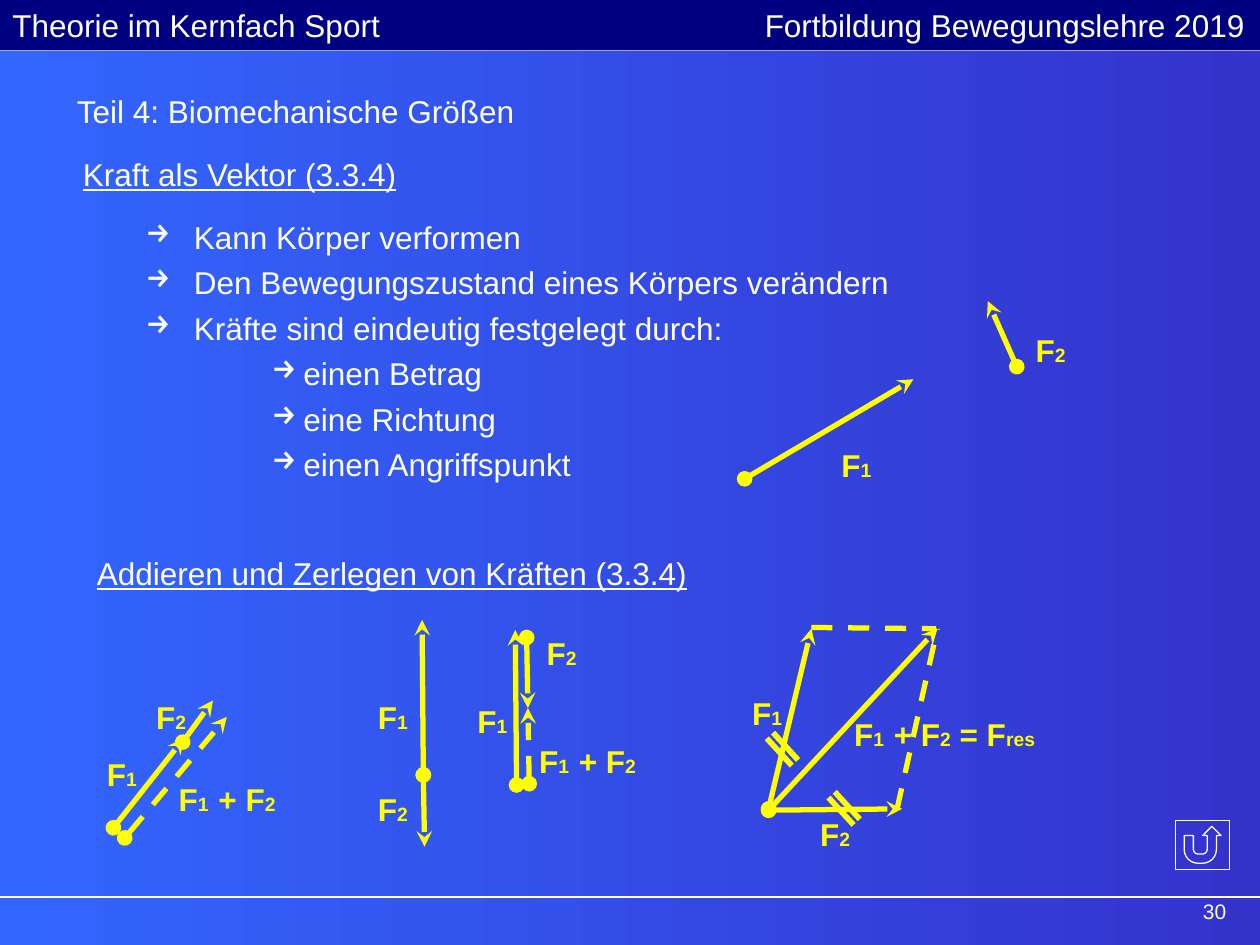
from lxml import etree
from pptx import Presentation, util as u
from pptx.dml.color import RGBColor
from pptx.enum import dml, shapes, text
from pptx.oxml import ns

COLORS = {
    "white": "FFFFFF",
    "yellow": "FFFF00",
    "header": "000080",
    "left": "3366FF",
    "right": "3333CC",
}
FONT = "Arial"

F1 = [("F", 18), ("1", 11)]
F2 = [("F", 18), ("2", 11)]
SUM = F1 + [(" ", 20), ("+ F", 18), ("2", 11)]
RESULTANT = SUM + [(" = F", 18), ("res", 11)]

LABELS = [
    (6.58, 3.49, 0.71, F1), (8.12, 2.58, 0.71, F2),
    (0.75, 5.94, 0.71, F1), (1.14, 5.49, 0.71, F2), (1.32, 6.11, 1.19, SUM),
    (2.9, 5.49, 0.71, F1), (2.9, 6.22, 0.71, F2),
    (3.69, 5.52, 0.71, F1), (4.24, 4.98, 0.71, F2), (4.18, 5.81, 1.19, SUM),
    (5.87, 5.46, 0.71, F1), (6.41, 6.42, 0.71, F2), (6.68, 5.6, 2.76, RESULTANT),
]
FORCES = [
    (5.91, 3.8, 7.25, 3.01), (8.07, 2.91, 7.84, 2.39),
    (1.45, 5.89, 1.69, 5.56), (0.9, 6.57, 1.46, 5.86),
    (3.36, 6.15, 3.35, 4.92), (3.36, 6.15, 3.37, 6.72),
    (4.18, 5.06, 4.19, 5.62), (4.1, 6.23, 4.09, 5),
    (6.1, 6.43, 7.16, 6.42), (6.1, 6.42, 6.44, 4.99), (6.1, 6.43, 7.44, 4.99),
]
DASHED_SUMS = [(0.99, 6.65, 1.8, 5.69), (4.2, 6.22, 4.19, 5.62)]
PARALLELS = [(7.12, 6.42, 7.44, 4.99), (6.44, 4.98, 7.43, 4.99)]
BULLETS = [
    ("Kann Körper verformen", 0),
    ("Den Bewegungszustand eines Körpers verändern", 0),
    ("Kräfte sind eindeutig festgelegt durch:", 0),
    ("einen Betrag", 2),
    ("eine Richtung", 2),
    ("einen Angriffspunkt", 2),
]
INDENTS = {0: (0.38, -0.38), 2: (1.25, -0.25)}


def rgb(name):
    return RGBColor.from_string(COLORS[name])


def add_run(paragraph, words, size=18, color="white", bold=False, underline=False):
    run = paragraph.add_run()
    run.text = words
    font = run.font
    font.name, font.size = FONT, u.Pt(size)
    font.bold, font.underline = bold, underline
    font.color.rgb = rgb(color)


def add_box(slide, left, top, width, height=0.4):
    box = slide.shapes.add_textbox(*map(u.Inches, (left, top, width, height)))
    box.text_frame.word_wrap = True
    return box.text_frame


def add_label(slide, left, top, width, runs):
    height = 0.44 if len(runs) > 2 else 0.4
    paragraph = add_box(slide, left, top, width, height).paragraphs[0]
    for words, size in runs:
        add_run(paragraph, words, size, "yellow", bold=True)


def add_line(slide, ends, color="yellow", width=3, dashed=False, arrow=False):
    line = slide.shapes.add_connector(
        shapes.MSO_CONNECTOR.STRAIGHT, *map(u.Inches, ends))
    line.line.color.rgb = rgb(color)
    line.line.width = u.Pt(width)
    if dashed:
        line.line.dash_style = dml.MSO_LINE.DASH
    if arrow:
        outline = line.line._get_or_add_ln()
        for tag, kind in (("a:headEnd", "oval"), ("a:tailEnd", "stealth")):
            etree.SubElement(outline, ns.qn(tag)).set("type", kind)
    etree.SubElement(line._element.spPr, ns.qn("a:effectLst"))


def add_preset(slide, kind, left, top, width, height, fill=None):
    shape = slide.shapes.add_shape(
        kind, *map(u.Inches, (left, top, width, height)))
    shape.shadow.inherit = False
    if fill:
        shape.fill.solid()
        shape.fill.fore_color.rgb = rgb(fill)
        shape.line.fill.background()
    else:
        shape.fill.background()
        shape.line.color.rgb = rgb("white")
        shape.line.width = u.Pt(0.75)
    return shape


def add_background(slide):
    fill = slide.background.fill
    fill.gradient()
    fill.gradient_angle = 0
    for stop, name in zip(fill.gradient_stops, ("left", "right")):
        stop.color.rgb = rgb(name)


def add_frame(slide):
    add_line(slide, (0, 0.4, 10, 0.4), "white", 1.25)
    header = add_preset(slide, shapes.MSO_SHAPE.RECTANGLE, 0, 0, 10, 0.4, "header")
    paragraph = header.text_frame.paragraphs[0]
    paragraph.alignment = text.PP_ALIGN.LEFT
    tabs = etree.SubElement(paragraph._p.get_or_add_pPr(), ns.qn("a:tabLst"))
    tab = etree.SubElement(tabs, ns.qn("a:tab"))
    tab.set("pos", str(u.Inches(9.78)))
    tab.set("algn", "r")
    add_run(paragraph, "Theorie im Kernfach Sport\tFortbildung Bewegungslehre 2019")
    add_line(slide, (0, 7.12, 10, 7.12), "white", 1.25)
    paragraph = add_box(slide, 7.75, 7.08, 2.08, 0.25).paragraphs[0]
    paragraph.alignment = text.PP_ALIGN.RIGHT
    add_run(paragraph, "30", 12)


def add_title(slide, words):
    title = slide.shapes.title
    title.left, title.top, title.width, title.height = map(
        u.Inches, (0.51, 0.68, 8.82, 0.4))
    frame = title.text_frame
    frame.auto_size = text.MSO_AUTO_SIZE.NONE
    frame.vertical_anchor = text.MSO_ANCHOR.TOP
    paragraph = frame.paragraphs[0]
    paragraph.alignment = text.PP_ALIGN.LEFT
    add_run(paragraph, words)


def add_heading(slide, left, top, width, words):
    frame = add_box(slide, left, top, width)
    add_run(frame.paragraphs[0], words, underline=True)


def add_bullets(slide):
    frame = add_box(slide, 1.06, 1.68, 7.55, 2.27)
    for number, (words, level) in enumerate(BULLETS):
        paragraph = frame.add_paragraph() if number else frame.paragraphs[0]
        paragraph.level = level
        properties = paragraph._p.get_or_add_pPr()
        margin, indent = INDENTS[level]
        properties.set("marL", str(u.Inches(margin)))
        properties.set("indent", str(u.Inches(indent)))
        etree.SubElement(properties, ns.qn("a:buChar")).set("char", "→")
        if number:
            paragraph.space_before = u.Pt(4.4)
        add_run(paragraph, words)


def main():
    presentation = Presentation()
    presentation.slide_width = u.Inches(10)
    presentation.slide_height = u.Inches(7.5)
    slide = presentation.slides.add_slide(presentation.slide_layouts[5])
    add_background(slide)
    add_frame(slide)
    add_title(slide, "Teil 4: Biomechanische Größen")
    add_heading(slide, 0.56, 1.18, 7.19, "Kraft als Vektor (3.3.4)")
    add_bullets(slide)
    add_heading(slide, 0.67, 4.35, 5.59, "Addieren und Zerlegen von Kräften (3.3.4)")
    for ends in FORCES:
        add_line(slide, ends, arrow=True)
    for ends in DASHED_SUMS:
        add_line(slide, ends, dashed=True, arrow=True)
    for ends in PARALLELS:
        add_line(slide, ends, dashed=True)
    for label in LABELS:
        add_label(slide, *label)
    for left, top in ((6.01, 5.85), (6.5, 6.32)):
        mark = add_preset(
            slide, shapes.MSO_SHAPE.MATH_EQUAL, left, top, 0.4, 0.19, "yellow")
        mark.rotation = 227.5
    add_preset(slide, shapes.MSO_SHAPE.ACTION_BUTTON_RETURN, 9.33, 6.51, 0.43, 0.39)
    presentation.save("out.pptx")


if __name__ == "__main__":
    main()
